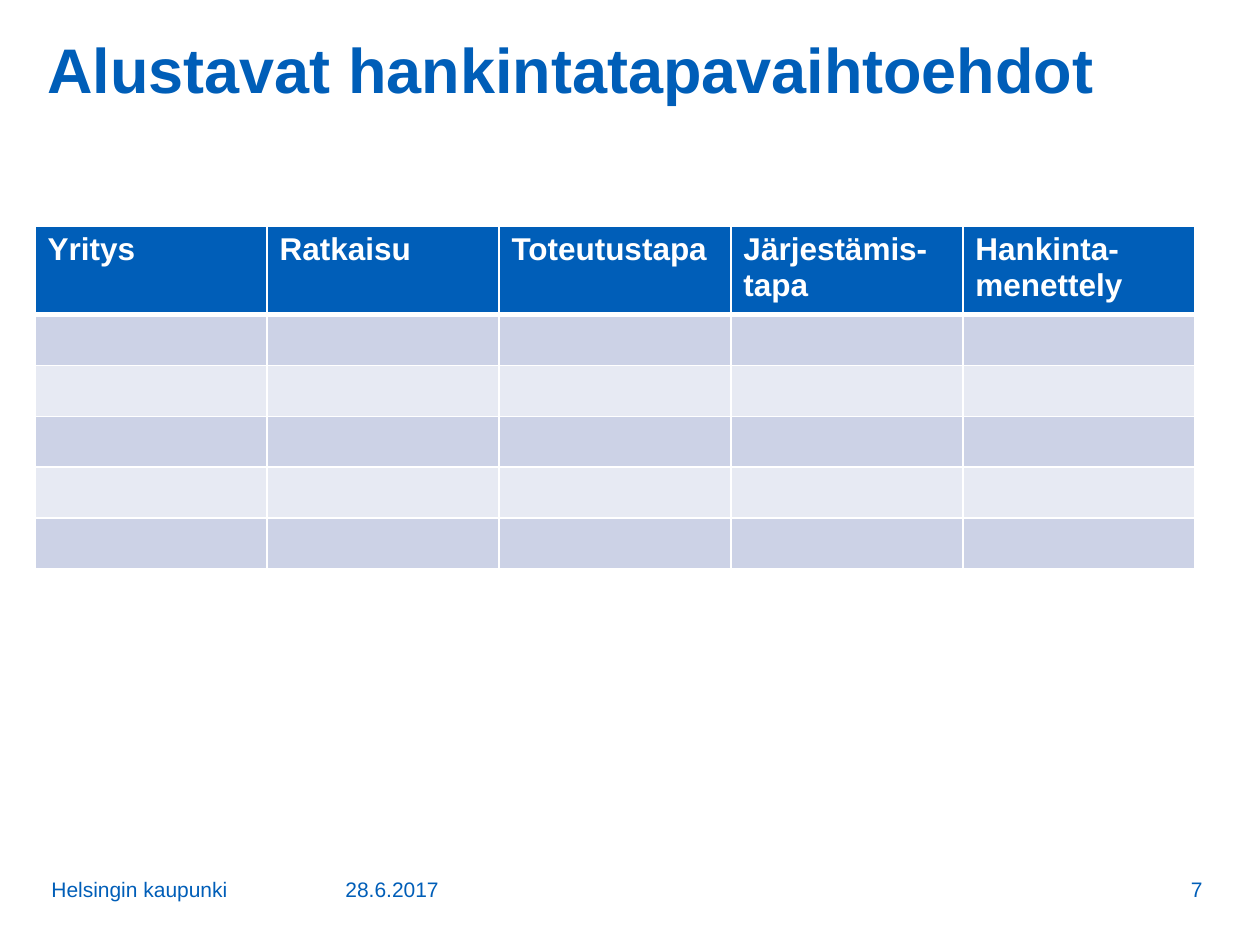
import pptx
import pptx.util
from pptx.dml.color import RGBColor
from pptx.enum.text import MSO_ANCHOR, PP_ALIGN
from pptx.oxml import parse_xml
from pptx.oxml.ns import nsdecls

BLUE = RGBColor(0x00, 0x5E, 0xB8)
WHITE = RGBColor(0xFF, 0xFF, 0xFF)
BANDS = [RGBColor(0xE7, 0xEA, 0xF3), RGBColor(0xCC, 0xD2, 0xE6)]
HEADERS = ["Yritys", "Ratkaisu", "Toteutustapa", "Järjestämis-tapa", "Hankinta-menettely"]
ROWS, COL_W, ROW_H = 6, 232, 51


def px(n):
    return round(n * 914400 / 126)


def style(p, size, color, bold=False):
    p.font.name = "Arial"
    p.font.size = pptx.util.Pt(size)
    p.font.bold = bold
    p.font.color.rgb = color


prs = pptx.Presentation()
prs.slide_width, prs.slide_height = px(1260), px(945)
s = prs.slides.add_slide(prs.slide_layouts[6])

# Title and footer
TOP, BOTTOM = MSO_ANCHOR.TOP, MSO_ANCHOR.BOTTOM
LEFT, RIGHT = PP_ALIGN.LEFT, PP_ALIGN.RIGHT
for text, x, y, w, h, size, bold, anchor, align in [
    ("Alustavat hankintatapavaihtoehdot", 35, 32, 1162, 74, 36, True, TOP, LEFT),
    ("28.6.2017", 333, 859, 195, 49, 12, False, BOTTOM, LEFT),
    ("Helsingin kaupunki", 39, 844, 294, 64, 12, False, BOTTOM, LEFT),
    ("7", 1066, 859, 149, 49, 12, False, BOTTOM, RIGHT),
]:
    tf = s.shapes.add_textbox(px(x), px(y), px(w), px(h)).text_frame
    tf.word_wrap = True
    tf.vertical_anchor = anchor
    p = tf.paragraphs[0]
    p.text = text
    p.alignment = align
    style(p, size, BLUE, bold)
    if anchor == TOP:
        tf.margin_top = px(10)
        p.line_spacing = 0.85

# Table: blue header over banded empty rows, white rules
table = s.shapes.add_table(ROWS, len(HEADERS), px(35), px(226),
                           px(COL_W * len(HEADERS)), px(ROW_H * ROWS)).table
for col in table.columns:
    col.width = px(COL_W)
for i, row in enumerate(table.rows):
    row.height = px(ROW_H)
    for j, cell in enumerate(row.cells):
        p = cell.text_frame.paragraphs[0]
        if i == 0:
            p.text = HEADERS[j]
        style(p, 18, WHITE if i == 0 else BLUE, i == 0)
        tcPr = cell._tc.get_or_add_tcPr()
        for side in ("L", "R", "T", "B"):
            header_rule = (i, side) in [(0, "B"), (1, "T")]
            width = pptx.util.Pt(3 if header_rule else 1)
            tcPr.append(parse_xml(
                f'<a:ln{side} {nsdecls("a")} w="{width}"><a:solidFill>'
                f'<a:srgbClr val="{WHITE}"/></a:solidFill></a:ln{side}>'))
        cell.fill.solid()
        cell.fill.fore_color.rgb = BLUE if i == 0 else BANDS[i % 2]

prs.save("out.pptx")
